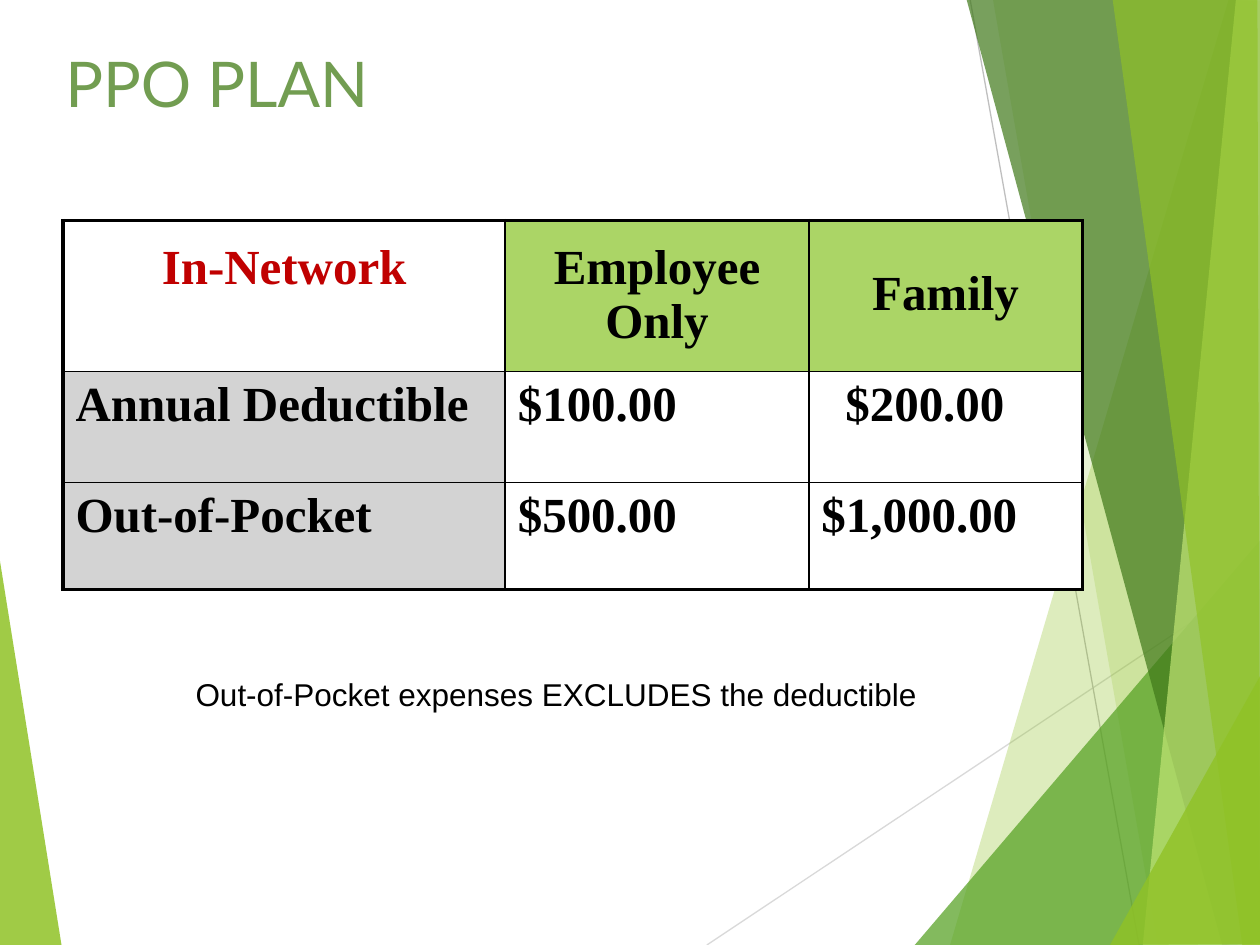
"""Build the PPO plan slide with its deductible table."""
from lxml.etree import SubElement
from pptx import Presentation
from pptx.dml.color import RGBColor as RGB
from pptx.enum.shapes import MSO_CONNECTOR as CONN
from pptx.enum.text import PP_ALIGN as AL
from pptx.oxml.ns import qn
from pptx.util import Inches, Pt

COLORS = {
    "lime": "90C226", "green": "54A021", "forest": "3F7819", "pale": "C0E474",
    "light_gray": "D9D9D9", "gray": "BFBFBF", "title": "729D51", "red": "C00000",
    "black": "000000", "white": "FFFFFF", "header": "ABD566", "label": "D3D3D3",
}


def rgb(name):
    return RGB.from_string(COLORS[name])


def write(tf, text, size, font, color, bold=False, align=AL.LEFT):
    p = tf.paragraphs[0]
    p.alignment = align
    r = p.add_run()
    r.text = text
    r.font.color.rgb = rgb(color)
    for name, value in {"size": Pt(size), "name": font, "bold": bold}.items():
        setattr(r.font, name, value)


prs = Presentation()
prs.slide_width, prs.slide_height = Inches(10), Inches(7.5)
s = prs.slides.add_slide(prs.slide_layouts[6])

lines = [("light_gray", 5.61, 7.5, 10.01, 4.57), ("gray", 7.7, 0, 9.04, 7.5)]
facets = [
    ("lime", 85, [(-0.01, 4.39), (0.49, 7.51), (-0.01, 7.5)]),
    ("lime", 30, [(9.75, 0), (7.54, 7.5), (10.02, 7.51), (10.01, 0.01)]),
    ("lime", 20, [(7.88, -0.01), (9.19, 7.5), (10.01, 7.5), (10.01, -0.01)]),
    ("green", 72, [(7.26, 7.5), (10, 4.29), (10.01, 7.5)]),
    ("forest", 70, [(7.67, -0.01), (9.7, 7.5), (10.01, 7.49), (10.01, -0.01)]),
    ("pale", 70, [(9.81, -0.01), (9.07, 7.5), (10.01, 7.5), (10, -0.01)]),
    ("lime", 65, [(8.83, -0.01), (9.86, 7.5), (10, 7.5), (9.98, -0.01)]),
    ("lime", 80, [(8.81, 7.5), (10.01, 5.35), (10.01, 7.49)]),
]

for color, *ends in lines:
    line = s.shapes.add_connector(CONN.STRAIGHT, *map(Inches, ends))
    line.line.color.rgb = rgb(color)
    line.line.width = Pt(0.75)
    SubElement(line._element.spPr, qn("a:effectLst"))

for color, opacity, points in facets:
    start, *rest = [(Inches(x), Inches(y)) for x, y in points]
    builder = s.shapes.build_freeform(*start)
    builder.add_line_segments(rest, close=True)
    sp = builder.convert_to_shape()
    sp.shadow.inherit = False
    sp.line.fill.background()
    sp.fill.solid()
    sp.fill.fore_color.rgb = rgb(color)
    fill = sp._element.spPr.find(qn("a:solidFill"))
    SubElement(fill[0], qn("a:alpha"), val=str(opacity * 1000))

texts = [
    ((0.42, 0.3, 9, 1.25), ("PPO PLAN", 36, "Lato", "title")),
    ((0, 5.31, 8.83, 0.4), ("Out-of-Pocket expenses EXCLUDES the deductible",
                            18, "Arial", "black", False, AL.CENTER)),
]
for box, content in texts:
    tf = s.shapes.add_textbox(*map(Inches, box)).text_frame
    tf.word_wrap = True
    write(tf, *content)

rows = [
    ["In-Network", "Employee Only", "Family"],
    ["Annual Deductible", "$100.00", "$200.00"],
    ["Out-of-Pocket", "$500.00", "$1,000.00"],
]
widths, heights = [3.51, 2.41, 2.17], [1.2, 0.88, 0.85]
margins = {
    (0, 0): {"margin_top": 0.16}, (0, 1): {"margin_top": 0.16},
    (0, 2): {"margin_top": 0.37}, (1, 2): {"margin_left": 0.29},
}
box = map(Inches, (0.5, 1.75, sum(widths), sum(heights)))
table = s.shapes.add_table(len(heights), len(widths), *box).table
table.first_row = table.horz_banding = False
for column, width in zip(table.columns, widths):
    column.width = Inches(width)
for row, height in zip(table.rows, heights):
    row.height = Inches(height)

for i, row in enumerate(rows):
    for j, text in enumerate(row):
        cell = table.cell(i, j)
        for name, value in margins.get((i, j), {}).items():
            setattr(cell, name, Inches(value))
        outer = {"L": j == 0, "R": j == len(widths) - 1,
                 "T": i == 0, "B": i == len(heights) - 1}
        tcPr = cell._tc.get_or_add_tcPr()
        for side, is_outer in outer.items():
            ln = SubElement(tcPr, qn(f"a:ln{side}"), w=str(Pt(2.25 if is_outer else 1)))
            SubElement(SubElement(ln, qn("a:solidFill")), qn("a:srgbClr"), val=COLORS["black"])
        corner = i == j == 0
        if corner:
            cell.fill.background()
        else:
            cell.fill.solid()
            cell.fill.fore_color.rgb = rgb("header" if i == 0 else "label" if j == 0 else "white")
        write(cell.text_frame, text, 28, "Times New Roman", "red" if corner else "black",
              True, AL.CENTER if i == 0 else AL.LEFT)

prs.save("out.pptx")
